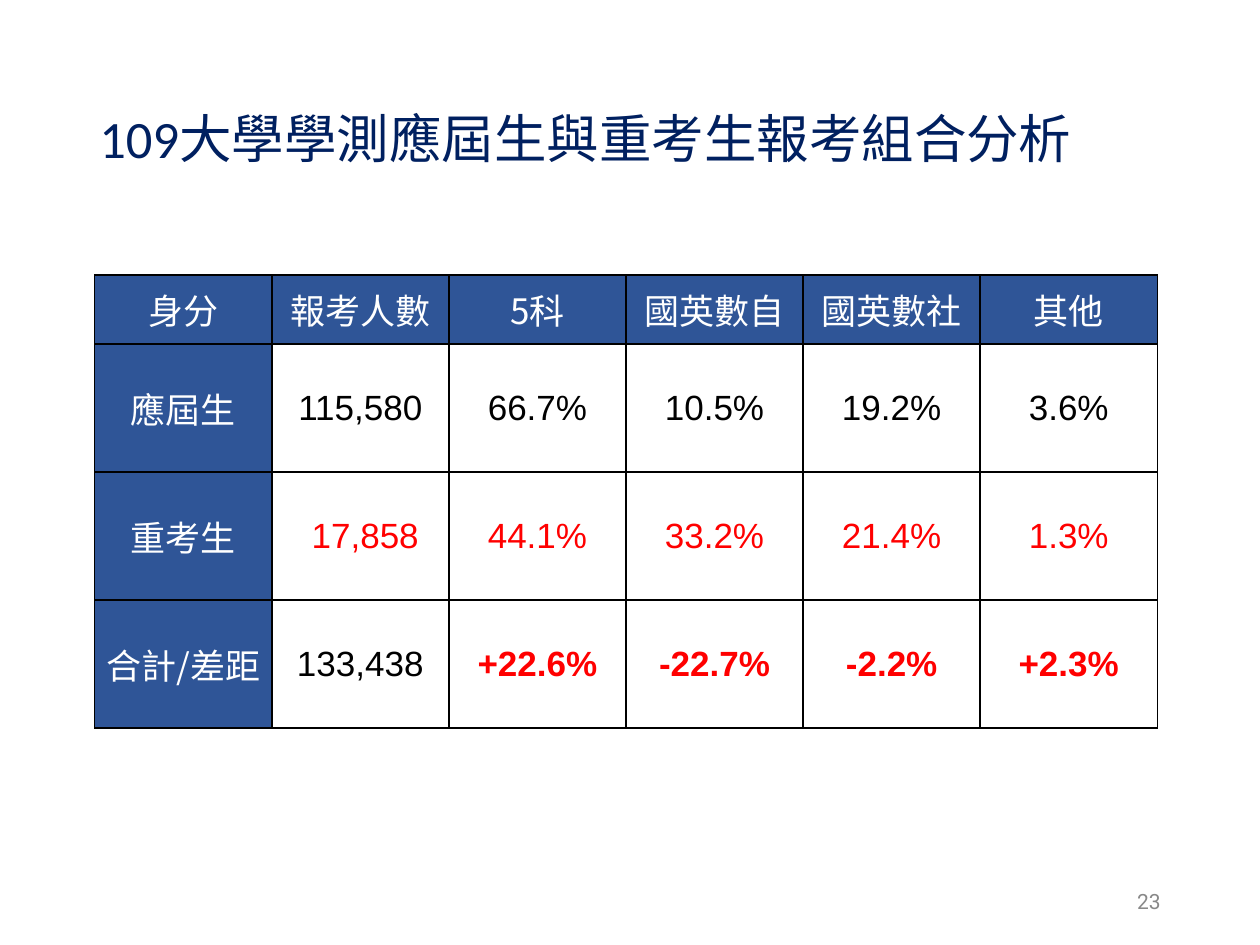
from lxml.etree import SubElement
from pptx import Presentation
from pptx.dml.color import RGBColor
from pptx.enum.text import MSO_ANCHOR, PP_ALIGN
from pptx.oxml.ns import qn
from pptx.util import Cm, Pt

COLORS = {"navy": "002060", "blue": "2F5597", "white": "FFFFFF",
          "black": "000000", "red": "FF0000", "gray": "898989"}
CJK = "Noto Sans CJK SC"


def write(tf, text, size=20, font=CJK, color="black", bold=False,
          align=PP_ALIGN.CENTER):
    tf.word_wrap = True
    p = tf.paragraphs[0]
    p.alignment = align
    r = p.add_run()
    r.text = text
    r.font.size = Pt(size)
    r.font.name = font
    r.font.bold = bold
    r.font.color.rgb = RGBColor.from_string(COLORS[color])
    SubElement(r._r.get_or_add_rPr(), qn("a:ea"), typeface=CJK)
    return p


def add_borders(cell):
    tcPr = cell._tc.get_or_add_tcPr()
    for side in ("lnL", "lnR", "lnT", "lnB"):
        ln = SubElement(tcPr, qn(f"a:{side}"), w=str(Pt(1)))
        fill = SubElement(ln, qn("a:solidFill"))
        SubElement(fill, qn("a:srgbClr"), val=COLORS["black"])


prs = Presentation()
prs.slide_width, prs.slide_height = Cm(25.4), Cm(19.05)
s = prs.slides.add_slide(prs.slide_layouts[5])

title = s.shapes.title
title.left, title.top, title.width, title.height = Cm(1.75), Cm(1.02), Cm(21.9), Cm(3.68)
title.text_frame.vertical_anchor = MSO_ANCHOR.MIDDLE
p = write(title.text_frame, "109大學學測應屆生與重考生報考組合分析", size=30,
          font="Calibri", color="navy", align=PP_ALIGN.LEFT)
p.line_spacing = 0.9

number = s.shapes.add_textbox(Cm(17.93), Cm(17.65), Cm(5.72), Cm(1.02))
number.text_frame.vertical_anchor = MSO_ANCHOR.MIDDLE
write(number.text_frame, "23", size=12, font="Roboto", color="gray",
      align=PP_ALIGN.RIGHT)

rows = [
    ["身分", "報考人數", "5科", "國英數自", "國英數社", "其他"],
    ["應屆生", "115,580", "66.7%", "10.5%", "19.2%", "3.6%"],
    ["重考生", " 17,858", "44.1%", "33.2%", "21.4%", "1.3%"],
    ["合計/差距", "133,438", "+22.6%", "-22.7%", "-2.2%", "+2.3%"],
]
RETAKERS, TOTAL = 2, 3
heights = [1.4, 2.58, 2.58, 2.58]
table = s.shapes.add_table(len(rows), len(rows[0]), Cm(1.91), Cm(5.54),
                           Cm(21.42), Cm(sum(heights))).table
table.first_row = table.horz_banding = False
for column in table.columns:
    column.width = Cm(3.57)

for i, values in enumerate(rows):
    table.rows[i].height = Cm(heights[i])
    for j, value in enumerate(values):
        cell = table.cell(i, j)
        cell.vertical_anchor = MSO_ANCHOR.MIDDLE
        cell.margin_left = cell.margin_right = Cm(0.18)
        cell.margin_top = cell.margin_bottom = 0
        add_borders(cell)
        if i == 0 or j == 0:
            cell.fill.solid()
            cell.fill.fore_color.rgb = RGBColor.from_string(COLORS["blue"])
            write(cell.text_frame, value, color="white")
        else:
            cell.fill.background()
            difference = i == TOTAL and j > 1
            write(cell.text_frame, value, font="Arial", bold=difference,
                  color="red" if i == RETAKERS or difference else "black")

prs.save("out.pptx")
